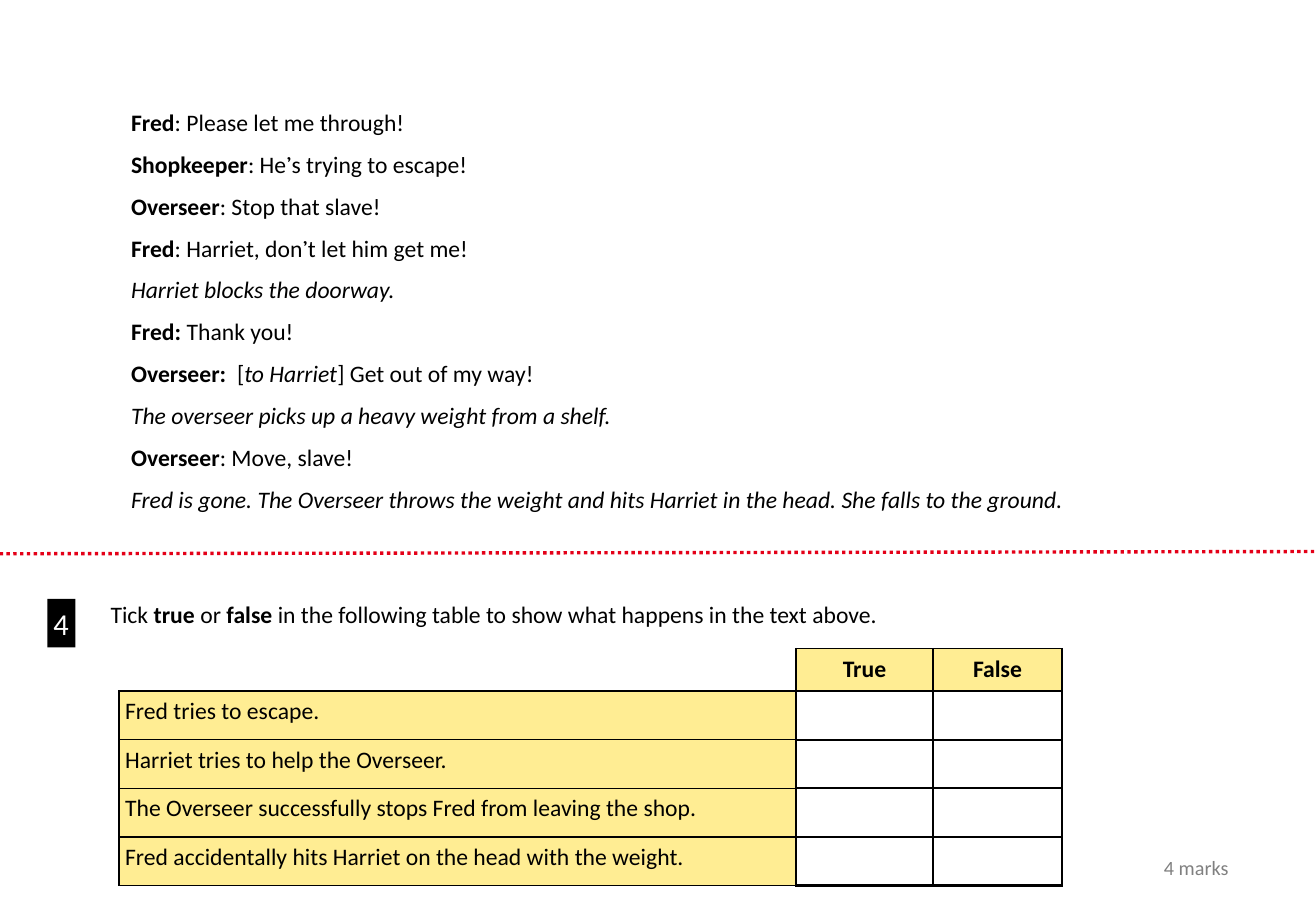
import pptx
import pptx.util
import pptx.dml.color
import pptx.enum.dml
import pptx.enum.shapes
import pptx.enum.text
import pptx.oxml
import pptx.oxml.ns

Inches = pptx.util.Inches
Pt = pptx.util.Pt
RGBColor = pptx.dml.color.RGBColor
PP_ALIGN = pptx.enum.text.PP_ALIGN

BLACK = RGBColor(0x00, 0x00, 0x00)
WHITE = RGBColor(0xFF, 0xFF, 0xFF)
RED = RGBColor(0xE4, 0x00, 0x18)
YELLOW = RGBColor(0xFF, 0xED, 0x93)
GREY = RGBColor(0x80, 0x80, 0x80)

SCRIPT = [
    [("Fred", "b"), (": Please let me through!", "")],
    [("Shopkeeper", "b"), (": He’s trying to escape!", "")],
    [("Overseer", "b"), (": Stop that slave!", "")],
    [("Fred", "b"), (": Harriet, don’t let him get me!", "")],
    [("Harriet blocks the doorway.", "i")],
    [("Fred:", "b"), (" Thank you!", "")],
    [("Overseer:", "b"), ("  [", ""), ("to Harriet", "i"), ("] Get out of my way!", "")],
    [("The overseer picks up a heavy weight from a shelf.", "i")],
    [("Overseer", "b"), (": Move, slave!", "")],
    [("Fred is gone. The Overseer throws the weight and hits Harriet in the head. "
      "She falls to the ground.", "i")],
]
QUESTION = [
    ("Tick ", ""), ("true", "b"), (" or ", ""), ("false", "b"),
    (" in the following table to show what happens in the text above.", ""),
]
ANSWERS = ["True", "False"]
STATEMENTS = [
    "Fred tries to escape.",
    "Harriet tries to help the Overseer.",
    "The Overseer successfully stops Fred from leaving the shop.",
    "Fred accidentally hits Harriet on the head with the weight.",
]


class Worksheet:
    font = "Calibri"
    quote_font = "Cambria"

    def __init__(self, prs):
        self.s = prs.slides.add_slide(prs.slide_layouts[6])

    def apply(self, obj, values):
        for name, value in values.items():
            setattr(obj, name, value)

    def add_run(self, p, text, style, size, color):
        for i, piece in enumerate(text.split("’")):
            parts = [(piece, self.font)]
            if i:
                parts.insert(0, ("’", self.quote_font))
            for content, font in parts:
                r = p.add_run()
                r.text = content
                self.apply(r.font, {"name": font, "size": Pt(size),
                                    "bold": "b" in style, "italic": "i" in style})
                r.font.color.rgb = color

    def add_lines(self, tf, lines, size=14, color=BLACK, align=PP_ALIGN.LEFT, after=0):
        for i, line in enumerate(lines):
            p = tf.add_paragraph() if i else tf.paragraphs[0]
            self.apply(p, {"alignment": align, "space_after": Pt(after)})
            for text, style in line:
                self.add_run(p, text, style, size, color)

    def frame(self, tf, inset, wrap):
        self.apply(tf, {"word_wrap": wrap,
                        "auto_size": pptx.enum.text.MSO_AUTO_SIZE.SHAPE_TO_FIT_TEXT,
                        "margin_left": Inches(inset), "margin_right": Inches(inset),
                        "margin_top": Inches(0.05), "margin_bottom": Inches(0.05)})

    def text(self, box, lines, inset=0.1, wrap=True, **style):
        sp = self.s.shapes.add_textbox(*map(Inches, box))
        self.frame(sp.text_frame, inset, wrap)
        self.add_lines(sp.text_frame, lines, **style)

    def badge(self, box, label):
        sp = self.s.shapes.add_shape(
            pptx.enum.shapes.MSO_SHAPE.RECTANGLE, *map(Inches, box))
        sp.shadow.inherit = False
        sp.fill.solid()
        sp.fill.fore_color.rgb = BLACK
        sp.line.fill.background()
        self.frame(sp.text_frame, 0.05, False)
        self.add_lines(sp.text_frame, [[(label, "")]], size=18, color=WHITE)

    def divider(self, start, end):
        cxn = self.s.shapes.add_connector(
            pptx.enum.shapes.MSO_CONNECTOR.STRAIGHT, *map(Inches, start + end))
        self.apply(cxn.line, {"width": Pt(2),
                              "dash_style": pptx.enum.dml.MSO_LINE.ROUND_DOT})
        cxn.line.color.rgb = RED
        cxn._element.spPr.append(pptx.oxml.parse_xml(
            f"<a:effectLst {pptx.oxml.ns.nsdecls('a')}/>"))

    def borders(self, cell, widths, colors):
        tcPr = cell._tc.get_or_add_tcPr()
        for side, width, color in zip("LRTB", widths, colors):
            tcPr.append(pptx.oxml.parse_xml(
                f"<a:ln{side} {pptx.oxml.ns.nsdecls('a')} w='{Pt(width)}'>"
                f"<a:solidFill><a:srgbClr val='{color}'/></a:solidFill></a:ln{side}>"))

    def cell(self, cell, text, heading):
        inset = Inches(0.05)
        self.apply(cell, {"margin_left": inset, "margin_right": inset,
                          "margin_top": inset if text else 0,
                          "margin_bottom": inset if text else 0})
        if text:
            cell.fill.solid()
            cell.fill.fore_color.rgb = YELLOW
            self.add_lines(cell.text_frame, [[(text, "b" if heading else "")]],
                           align=PP_ALIGN.CENTER if heading else PP_ALIGN.LEFT)
        else:
            cell.fill.background()

    def tick_table(self, box, widths, heights, rows):
        table = self.s.shapes.add_table(
            len(rows), len(widths), *map(Inches, box)).table
        self.apply(table, {"first_row": False, "horz_banding": False})
        for col, width in zip(table.columns, widths):
            col.width = Inches(width)
        for row, height in zip(table.rows, heights):
            row.height = Inches(height)
        for i, row in enumerate(rows):
            for j, text in enumerate(row):
                lines, colors = [1] * 4, [BLACK] * 4
                if i == j == 0:
                    lines, colors = [1.5, 1, 1.5, 1], [WHITE, BLACK, WHITE, BLACK]
                elif not text:
                    lines = [1 if j == 1 else 1.5, 1.5, 1 if i == 1 else 1.5, 1.5]
                cell = table.cell(i, j)
                self.borders(cell, lines, colors)
                self.cell(cell, text, i == 0)


def main():
    prs = pptx.Presentation()
    prs.slide_width, prs.slide_height = Inches(10.83), Inches(7.5)
    sheet = Worksheet(prs)
    sheet.divider((-0.45, 4.56), (11.2, 4.54))
    sheet.text((0.98, 0.84, 8.32, 3.47), SCRIPT, after=8)
    sheet.text((0.86, 4.89, 8, 0.57), [QUESTION], inset=0.05)
    sheet.badge((0.39, 4.93, 0.23, 0.4), "4")
    rows = [[""] + ANSWERS] + [[text, "", ""] for text in STATEMENTS]
    sheet.tick_table((0.98, 5.34, 7.76, 1.95), [5.57, 1.13, 1.06],
                     [0.35] + [0.4] * len(STATEMENTS), rows)
    sheet.text((9.48, 6.99, 0.74, 0.3), [[("4 marks", "")]],
               wrap=False, size=12, color=GREY)
    prs.save("out.pptx")


if __name__ == "__main__":
    main()
